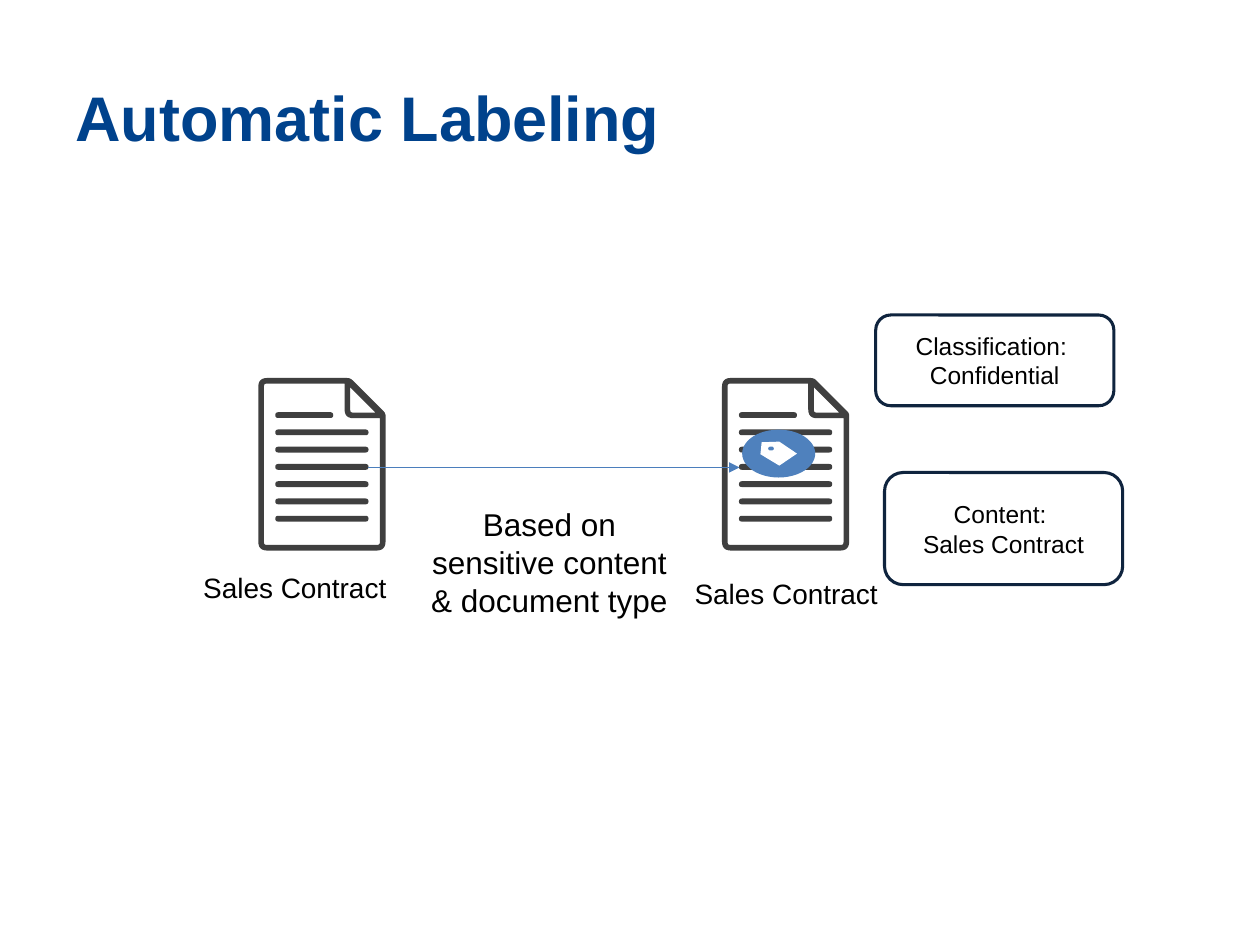
from dataclasses import dataclass

from lxml import etree
from pptx import Presentation
from pptx.dml.color import RGBColor
from pptx.enum.shapes import MSO_CONNECTOR, MSO_SHAPE
from pptx.enum.text import MSO_ANCHOR, PP_ALIGN
from pptx.oxml.ns import qn
from pptx.util import Inches, Pt

STRAIGHT = MSO_CONNECTOR.STRAIGHT
OVAL = MSO_SHAPE.OVAL
ROUNDED = MSO_SHAPE.ROUNDED_RECTANGLE
TOP, MIDDLE = MSO_ANCHOR.TOP, MSO_ANCHOR.MIDDLE
LEFT, CENTER = PP_ALIGN.LEFT, PP_ALIGN.CENTER
UNIT = Inches(0.1)
COLUMNS, ROWS = 100, 75
DOCUMENT_GRID = (1010, 1370)
TAG_GRID = (290, 190)
CURVE_STEPS = 6


@dataclass(frozen=True)
class Theme:
    """Colours, font and type sizes of the slide."""

    font: str = "Arial"
    title: str = "00428C"
    text: str = "000000"
    paper: str = "FFFFFF"
    icon: str = "3F3F3F"
    border: str = "0F243E"
    arrow: str = "4B7EBC"
    badge: str = "4F81BD"
    title_size: int = 36
    note_size: int = 18
    caption_size: int = 16
    label_size: int = 14
    border_width: float = 1.75
    arrow_width: float = 0.75


@dataclass(frozen=True)
class Box:
    """A rectangle in columns and rows of the slide grid."""

    left: float
    top: float
    width: float
    height: float

    def lengths(self):
        """Return left, top, width and height as slide lengths."""
        sides = (self.left, self.top, self.width, self.height)
        return [round(side * UNIT) for side in sides]

    def inner(self, left, top, width, height):
        """Return the inner box at the given offset and size."""
        return Box(self.left + left, self.top + top, width, height)


THEME = Theme()


def color(value):
    """Return a colour from its hexadecimal value."""
    return RGBColor.from_string(value)


def write(shape, lines, size, tint=THEME.text, align=CENTER, anchor=TOP, bold=False):
    """Fill a shape with one formatted paragraph for each line."""
    frame = shape.text_frame
    frame.text = "\n".join(lines)
    frame.vertical_anchor = anchor
    for paragraph in frame.paragraphs:
        paragraph.alignment = align
        for run in paragraph.runs:
            run.font.name = THEME.font
            run.font.size = Pt(size)
            run.font.bold = bold
            run.font.color.rgb = color(tint)


def add_text(slide, box, text, size, **style):
    """Place a wrapping text box."""
    shape = slide.shapes.add_textbox(*box.lengths())
    shape.text_frame.word_wrap = True
    write(shape, [text], size, **style)


def paint(shape, fill):
    """Give a shape a plain fill without line or shadow."""
    shape.shadow.inherit = False
    shape.fill.solid()
    shape.fill.fore_color.rgb = color(fill)
    shape.line.fill.background()


def toward(start, end, distance):
    """Return the point at a distance from start on the way to end."""
    across, down = end[0] - start[0], end[1] - start[1]
    share = distance / (across**2 + down**2) ** 0.5
    return start[0] + across * share, start[1] + down * share


def rounded(corners):
    """Return the points of a polygon whose (x, y, radius) corners are curved."""
    points = []
    for index, corner in enumerate(corners):
        x, y, radius = corner
        if not radius:
            points.append((x, y))
            continue
        first = toward(corner, corners[index - 1], radius)
        last = toward(corner, corners[(index + 1) % len(corners)], radius)
        for step in range(CURVE_STEPS + 1):
            t = step / CURVE_STEPS
            weights = ((1 - t) ** 2, 2 * t * (1 - t), t**2)
            points.append(tuple(
                sum(weight * value for weight, value in zip(weights, values))
                for values in zip(first, (x, y), last)
            ))
    return points


def bar(left, top, width, height):
    """Return the corners of a bar with round ends."""
    right, bottom, radius = left + width, top + height, height / 2
    return [(left, top, radius), (right, top, radius),
            (right, bottom, radius), (left, bottom, radius)]


def add_outline(slide, box, grid, contours, fill):
    """Draw closed contours, given on a local grid, as one filled freeform."""
    left, top, width, height = box.lengths()
    outlines = [rounded(contour) for contour in contours]
    scale = (width / grid[0], height / grid[1])
    builder = slide.shapes.build_freeform(*outlines[0][0], scale=scale)
    for index, points in enumerate(outlines):
        if index:
            builder.move_to(*points[0])
        builder.add_line_segments(points[1:], close=True)
    paint(builder.convert_to_shape(left, top), fill)


def add_document(slide, box):
    """Draw a page icon with a folded corner and seven text lines."""
    edge = [(0, 0, 70), (730, 0, 30), (1010, 280, 20), (1010, 1370, 70), (0, 1370, 70)]
    inside = [(45, 45, 20), (685, 45, 0), (685, 320, 70),
              (965, 320, 0), (965, 1325, 20), (45, 1325, 20)]
    fold = [(730, 75, 0), (730, 275, 20), (930, 275, 0)]
    lines = [bar(135, 272 + 137 * row, 740 if row else 460, 46) for row in range(7)]
    add_outline(slide, box, DOCUMENT_GRID, [edge, inside, fold, *lines], THEME.icon)


def add_badge(slide, box):
    """Draw an oval badge that holds a tag."""
    paint(slide.shapes.add_shape(OVAL, *box.lengths()), THEME.badge)
    tag = [(0, 100, 0), (10, 5, 0), (150, 0, 0), (290, 95, 0), (150, 190, 0)]
    tag_box = box.inner(box.width / 4, box.height / 4, box.width / 2, box.height / 2)
    add_outline(slide, tag_box, TAG_GRID, [tag, bar(62, 40, 45, 30)], THEME.paper)


def add_label(slide, box, lines):
    """Draw a bordered label with centred lines."""
    shape = slide.shapes.add_shape(ROUNDED, *box.lengths())
    paint(shape, THEME.paper)
    shape.line.color.rgb = color(THEME.border)
    shape.line.width = Pt(THEME.border_width)
    frame = shape.text_frame
    frame.word_wrap = False
    frame.margin_left = frame.margin_right = Inches(0.07)
    frame.margin_top = frame.margin_bottom = Inches(0.04)
    write(shape, lines, THEME.label_size, anchor=MIDDLE)


def add_arrow(slide, box):
    """Draw an arrow along the top edge of a box."""
    left, top, width, _ = box.lengths()
    arrow = slide.shapes.add_connector(STRAIGHT, left, top, left + width, top)
    arrow.line.color.rgb = color(THEME.arrow)
    arrow.line.width = Pt(THEME.arrow_width)
    properties = arrow._element.spPr
    etree.SubElement(properties.find(qn("a:ln")), qn("a:tailEnd"), type="triangle")
    etree.SubElement(properties, qn("a:effectLst"))


def add_labeling_flow(slide, box):
    """Place the two documents, the arrow between them and the labels."""
    add_document(slide, box.inner(5.7, 5, 10.1, 13.7))
    add_text(slide, box.inner(0, 19.8, 17.2, 3.7), "Sales Contract", THEME.caption_size)
    add_label(slide, box.inner(55.4, 12.5, 18.9, 8.9), ["Content: ", "Sales Contract"])
    add_label(slide, box.inner(54.7, 0, 18.9, 7.2), ["Classification: ", "Confidential"])
    add_text(slide, box.inner(18.2, 14.6, 21.2, 11.8),
             "Based on sensitive content & document type", THEME.note_size)
    add_document(slide, box.inner(42.5, 5, 10.1, 13.7))
    add_text(slide, box.inner(37.5, 20.3, 20.2, 3.7), "Sales Contract", THEME.caption_size)
    add_arrow(slide, box.inner(14.4, 12.1, 29.5, 0))
    add_badge(slide, box.inner(44.1, 9.1, 5.8, 3.8))


def main():
    """Build the slide and save it."""
    presentation = Presentation()
    presentation.slide_width = COLUMNS * UNIT
    presentation.slide_height = ROWS * UNIT
    slide = presentation.slides.add_slide(presentation.slide_layouts[6])
    add_labeling_flow(slide, Box(14.8, 25, 74.3, 26.4))
    add_text(slide, Box(5, 3, 90, 12.5), "Automatic Labeling", THEME.title_size,
             tint=THEME.title, align=LEFT, anchor=MIDDLE, bold=True)
    presentation.save("out.pptx")


if __name__ == "__main__":
    main()
